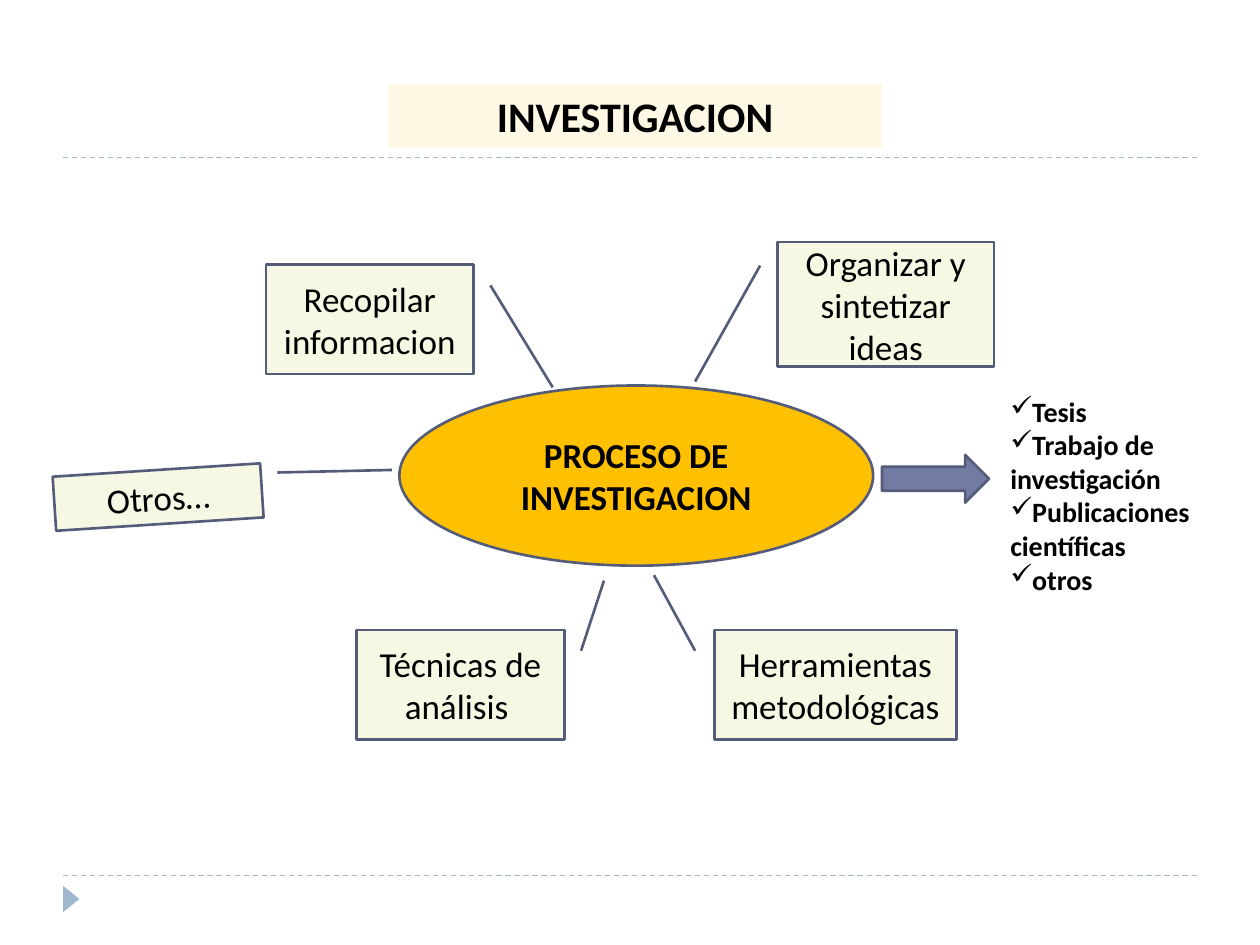
from dataclasses import dataclass
from lxml.etree import SubElement
from pptx import Presentation
from pptx.dml.color import RGBColor as Rgb
from pptx.enum.dml import MSO_LINE_DASH_STYLE as Dash
from pptx.enum.shapes import MSO_CONNECTOR as Wire, MSO_SHAPE as Kind
from pptx.enum.text import MSO_ANCHOR as Anchor, PP_ALIGN as Align
from pptx.oxml.ns import qn
from pptx.util import Inches, Pt


@dataclass(frozen=True)
class Theme:
    """Colours, type sizes and line widths of the slide."""
    font: str = "Calibri"
    ink: str = "000000"
    edge: str = "545C79"
    rule: str = "9FB8CD"
    hub: str = "FFC000"
    note: str = "F6F8E4"
    arrow: str = "727CA3"
    band: str = "FEF8E4"
    title: int = 24
    body: int = 20
    list: int = 16
    thin: float = 0.75
    thick: float = 1.5


@dataclass(frozen=True)
class Box:
    """An area measured in columns and rows of the grid."""
    x: float
    y: float
    w: float
    h: float

    def sub(self, x, y, w, h):
        """Return an area placed from this one's top left corner."""
        return Box(self.x + x, self.y + y, w, h)

    def emu(self):
        """Return left, top, width and height as lengths."""
        return [Inches(v * CELL) for v in (self.x, self.y, self.w, self.h)]


THEME = Theme()
CELL = 0.1
PAGE = Box(0, 0, 100, 75)


def shape(slide, kind, box, fill, edge=None):
    """Add a flat preset shape."""
    item = slide.shapes.add_shape(kind, *box.emu())
    item.shadow.inherit = False
    item.fill.solid()
    item.fill.fore_color.rgb = Rgb.from_string(fill)
    if edge:
        item.line.color.rgb = Rgb.from_string(edge)
        item.line.width = Pt(THEME.thick)
    else:
        item.line.fill.background()
    return item


def write(item, text, size, bold=False, align=Align.CENTER, anchor=Anchor.MIDDLE):
    """Set the text of a shape and format its runs."""
    frame = item.text_frame
    frame.text = text
    frame.word_wrap = True
    frame.vertical_anchor = anchor
    for para in frame.paragraphs:
        para.alignment = align
        for run in para.runs:
            font = run.font
            font.name, font.size, font.bold = THEME.font, Pt(size), bold
            font.color.rgb = Rgb.from_string(THEME.ink)


def frame(slide, box):
    """Draw the two dashed rules and the corner mark."""
    for row in (12.5, 69.5):
        x, y, w, _ = box.sub(5, row, 90, 0).emu()
        line = slide.shapes.add_connector(Wire.STRAIGHT, x, y, x + w, y)
        line.line.color.rgb = Rgb.from_string(THEME.rule)
        line.line.width = Pt(THEME.thin)
        line.line.dash_style = Dash.DASH
        SubElement(line.element.spPr, qn("a:effectLst"))
    mark = shape(slide, Kind.ISOSCELES_TRIANGLE, box.sub(4.6, 70.7, 2.1, 1.3), THEME.rule)
    mark.rotation = 90


def title(slide, box):
    """Fill the box with the title band."""
    band = shape(slide, Kind.RECTANGLE, box, THEME.band)
    write(band, "INVESTIGACION", THEME.title, True, anchor=Anchor.TOP)


def note(slide, box, text, right, tip, turn=0):
    """Draw a callout whose leader leaves from its right or left side."""
    item = shape(slide, Kind.LINE_CALLOUT_1, box, THEME.note, THEME.edge)
    drop, reach = tip
    ends = (0.19, 0.08, drop, reach)
    for i, end in enumerate(ends):
        item.adjustments[i] = end if i % 2 == 0 else 1 + end if right else -end
    item.rotation = turn
    write(item, text, THEME.body)


def process(slide, box):
    """Draw the central ellipse with its callouts and the arrow."""
    hub = shape(slide, Kind.OVAL, box.sub(27.4, 11.4, 37.6, 14.3), THEME.hub, THEME.edge)
    write(hub, "PROCESO DE INVESTIGACION", THEME.body, True)
    notes = (
        ((16.8, 1.8, 16.5, 8.7), "Recopilar informacion", True, (1.12, 0.38)),
        ((57.4, 0, 17.2, 9.9), "Organizar y sintetizar ideas", False, (1.12, 0.38)),
        ((24, 30.8, 16.5, 8.7), "Técnicas de análisis ", True, (-0.45, 0.19)),
        ((52.4, 30.8, 19.2, 8.7), "Herramientas metodológicas", False, (-0.5, 0.25)),
        ((0, 18.1, 16.5, 4.3), "Otros…", True, (0.28, 0.63), -3.7),
    )
    for area, *rest in notes:
        note(slide, box.sub(*area), *rest)
    shape(slide, Kind.RIGHT_ARROW, box.sub(65.7, 16.9, 8.5, 3.8), THEME.arrow, THEME.edge)


def results(slide, box):
    """Fill the box with the ticked list of results."""
    item = slide.shapes.add_textbox(*box.emu())
    lines = ("Tesis", "Trabajo de investigación", "Publicaciones científicas", "otros")
    write(item, "\n".join(lines), THEME.list, True, Align.LEFT, Anchor.TOP)
    for para in item.text_frame.paragraphs:
        SubElement(para._p.get_or_add_pPr(), qn("a:buChar")).set("char", "✓")


def main():
    """Build the slide and save it."""
    deck = Presentation()
    deck.slide_width, deck.slide_height = PAGE.emu()[2:]
    slide = deck.slides.add_slide(deck.slide_layouts[6])
    frame(slide, PAGE)
    process(slide, PAGE.sub(4.3, 19.2, 74.6, 39.5))
    results(slide, PAGE.sub(79.2, 30.8, 18.3, 17.2))
    title(slide, PAGE.sub(30.8, 6.7, 39.2, 5))
    deck.save("out.pptx")


if __name__ == "__main__":
    main()
